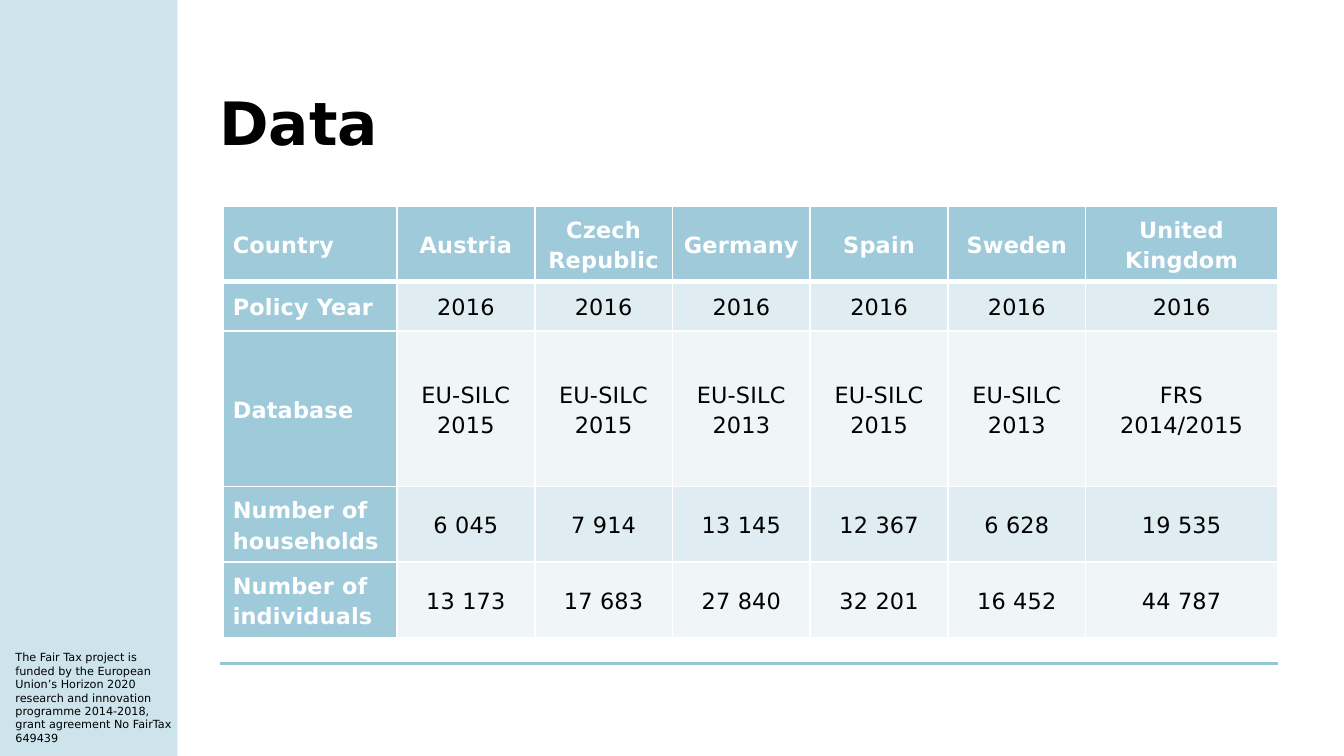
from dataclasses import dataclass

from lxml.etree import SubElement
from pptx import Presentation
from pptx.dml.color import RGBColor
from pptx.enum.shapes import MSO_CONNECTOR, MSO_SHAPE
from pptx.enum.text import MSO_ANCHOR, MSO_AUTO_SIZE, PP_ALIGN
from pptx.oxml.ns import qn
from pptx.util import Pt


@dataclass(frozen=True)
class Theme:
    font: str = "DejaVu Sans"
    black: str = "000000"
    white: str = "FFFFFF"
    blue: str = "9ECADA"
    rule: str = "93C7D0"
    bands: tuple = ("DFECF1", "F0F6F8")
    title: float = 32
    body: float = 12
    note: float = 6


THEME = Theme()

WIDTHS = [93] + [73.8] * 5 + [102.8]
HEIGHTS = [40.5, 26.7, 83.2, 40.6, 40.6]
ROWS = [
    ["Country", "Austria", "Czech Republic", "Germany", "Spain", "Sweden", "United Kingdom"],
    ["Policy Year"] + ["2016"] * 6,
    ["Database", "EU-SILC 2015", "EU-SILC 2015", "EU-SILC 2013",
     "EU-SILC 2015", "EU-SILC 2013", "FRS 2014/2015"],
    ["Number of households", "6 045", "7 914", "13 145", "12 367", "6 628", "19 535"],
    ["Number of individuals", "13 173", "17 683", "27 840", "32 201", "16 452", "44 787"],
]
FUNDING = (
    "The Fair Tax project is funded by the European Union’s Horizon 2020 "
    "research and innovation programme 2014-2018, grant agreement No FairTax 649439"
)


def color(code):
    return RGBColor.from_string(code)


def add_run(para, text, size, code=THEME.black, bold=False):
    run = para.add_run()
    run.text = text
    font = run.font
    font.name = THEME.font
    font.size = Pt(size)
    font.bold = bold
    font.color.rgb = color(code)
    return run


def add_panel(slide):
    panel = slide.shapes.add_shape(MSO_SHAPE.RECTANGLE, Pt(0), Pt(0), Pt(95), Pt(405))
    panel.shadow.inherit = False
    panel.line.fill.background()
    panel.fill.solid()
    panel.fill.fore_color.rgb = color(THEME.blue)
    tint = panel.fill._xPr.find(qn("a:solidFill"))[0]
    SubElement(tint, qn("a:alpha")).set("val", "50000")


def add_rule(slide):
    rule = slide.shapes.add_connector(
        MSO_CONNECTOR.STRAIGHT, Pt(118), Pt(355.5), Pt(684.7), Pt(355.5))
    rule.line.color.rgb = color(THEME.rule)
    rule.line.width = Pt(1.5)
    SubElement(rule._element.spPr, qn("a:effectLst"))


def add_note(slide):
    frame = slide.shapes.add_textbox(Pt(1.2), Pt(345), Pt(99.4), Pt(58)).text_frame
    frame.word_wrap = True
    add_run(frame.paragraphs[0], FUNDING, THEME.note)


def set_title(slide):
    title = slide.shapes.title
    title.left, title.top, title.width, title.height = Pt(110.2), Pt(46.8), Pt(574.5), Pt(41.8)
    frame = title.text_frame
    frame.auto_size = MSO_AUTO_SIZE.NONE
    frame.vertical_anchor = MSO_ANCHOR.MIDDLE
    para = frame.paragraphs[0]
    para.alignment = PP_ALIGN.LEFT
    para.line_spacing = 0.9
    add_run(para, "Data", THEME.title, bold=True)


def set_edge(cell, side, width):
    edge = SubElement(cell._tc.get_or_add_tcPr(), qn(f"a:ln{side}"), w=str(Pt(width)))
    fill = SubElement(edge, qn("a:solidFill"))
    SubElement(fill, qn("a:srgbClr"), val=THEME.white)


def fill_cell(cell, text, row, col):
    label = row == 0 or col == 0
    thick = {(0, "B"), (1, "T")}
    for side in "LRTB":
        set_edge(cell, side, 3 if (row, side) in thick else 1)
    cell.fill.solid()
    cell.fill.fore_color.rgb = color(THEME.blue if label else THEME.bands[(row - 1) % 2])
    cell.vertical_anchor = MSO_ANCHOR.MIDDLE
    cell.margin_left = cell.margin_right = Pt(5)
    cell.margin_top = cell.margin_bottom = Pt(0)
    para = cell.text_frame.paragraphs[0]
    para.alignment = PP_ALIGN.CENTER if col else PP_ALIGN.LEFT
    para.line_spacing = 1.15
    para.space_after = Pt(6)
    run = add_run(para, text, THEME.body, THEME.white if label else THEME.black, label)
    run.font._element.set("spc", "10")


def add_grid(slide):
    table = slide.shapes.add_table(
        len(ROWS), len(WIDTHS), Pt(119.7), Pt(110.2),
        Pt(sum(WIDTHS)), Pt(sum(HEIGHTS))).table
    for col, width in zip(table.columns, WIDTHS):
        col.width = Pt(width)
    for row, height in zip(table.rows, HEIGHTS):
        row.height = Pt(height)
    for row, texts in enumerate(ROWS):
        for col, text in enumerate(texts):
            fill_cell(table.cell(row, col), text, row, col)


def main():
    deck = Presentation()
    deck.slide_width, deck.slide_height = Pt(720), Pt(405)
    slide = deck.slides.add_slide(deck.slide_layouts[5])
    add_panel(slide)
    add_rule(slide)
    add_note(slide)
    set_title(slide)
    add_grid(slide)
    deck.save("out.pptx")


if __name__ == "__main__":
    main()
